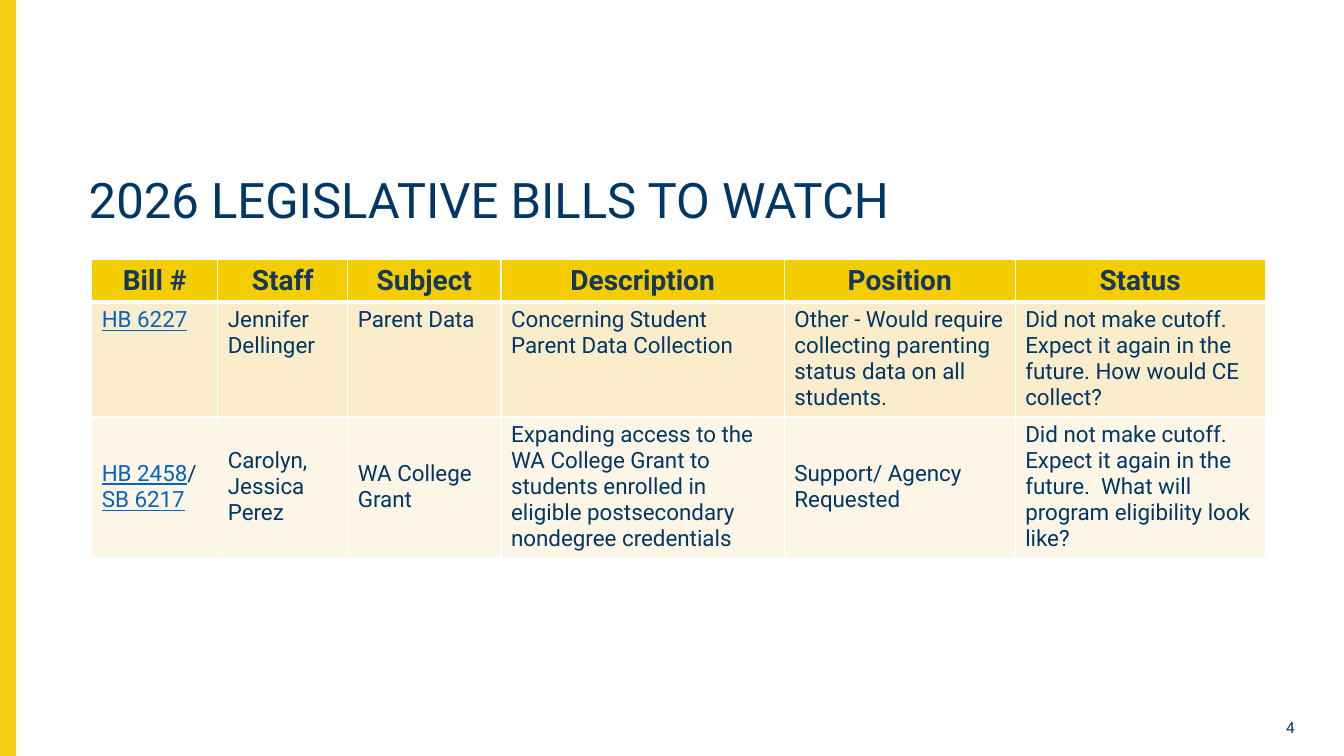
from typing import Any, NamedTuple

from lxml import etree
from pptx import Presentation
from pptx.dml.color import RGBColor
from pptx.enum.shapes import MSO_SHAPE
from pptx.enum.text import MSO_ANCHOR, MSO_AUTO_SIZE, PP_ALIGN
from pptx.oxml.ns import qn
from pptx.util import Inches, Pt

RECTANGLE = MSO_SHAPE.RECTANGLE
TOP, MIDDLE = MSO_ANCHOR.TOP, MSO_ANCHOR.MIDDLE
LEFT, CENTER, RIGHT = PP_ALIGN.LEFT, PP_ALIGN.CENTER, PP_ALIGN.RIGHT
NO_AUTOFIT = MSO_AUTO_SIZE.NONE

COLORS = {
    "bar": "F4CE12",
    "navy": "003764",
    "heading": "15385C",
    "link": "0563C1",
    "header_fill": "F4CD00",
    "parent_data_fill": "FBEDCC",
    "grant_fill": "FDF6E7",
    "border": "FFFFFF",
}
FORMATS = {
    "title": {"size": Pt(35), "bold": False},
    "heading": {"size": Pt(20), "bold": True},
    "body": {"size": Pt(16), "bold": False},
    "link": {"size": Pt(16), "bold": False, "underline": True},
    "page": {"size": Pt(11), "bold": False},
}


class Span(NamedTuple):
    text: str
    style: str = "body"
    color: str = "navy"


class BillRow(NamedTuple):
    cells: list[list[Span]]
    height: float
    fill: str
    anchor: Any = MIDDLE
    align: Any = LEFT
    top_border: float = 1
    bottom_border: float = 1


def body(*texts: str) -> list[list[Span]]:
    return [[Span(text)] for text in texts]


def link(text: str) -> Span:
    return Span(text, "link", "link")


HEADINGS = ["Bill #", "Staff", "Subject", "Description", "Position", "Status"]
COLUMN_WIDTHS = [1.25, 1.29, 1.52, 2.81, 2.29, 2.48]
BILL_ROWS = [
    BillRow(
        [[Span(heading, "heading", "heading")] for heading in HEADINGS],
        0.42, "header_fill", align=CENTER, bottom_border=3,
    ),
    BillRow(
        [[link("HB 6227")]] + body(
            "Jennifer Dellinger",
            "Parent Data",
            "Concerning Student Parent Data Collection",
            "Other - Would require collecting parenting status data on all students.",
            "Did not make cutoff. Expect it again in the future. How would CE collect?",
        ),
        1.14, "parent_data_fill", anchor=TOP, top_border=3,
    ),
    BillRow(
        [[link("HB 2458"), Span("/ "), link("SB 6217")]] + body(
            "Carolyn, Jessica Perez",
            "WA College Grant",
            "Expanding access to the WA College Grant to students enrolled in "
            "eligible postsecondary nondegree credentials",
            "Support/ Agency Requested",
            "Did not make cutoff. Expect it again in the future.  "
            "What will program eligibility look like?",
        ),
        1.39, "grant_fill",
    ),
]


def paint(fill: Any, color: str) -> None:
    fill.solid()
    fill.fore_color.rgb = RGBColor.from_string(COLORS[color])


def write(paragraph: Any, spans: list[Span], align: Any) -> None:
    paragraph.alignment = align
    for span in spans:
        run = paragraph.add_run()
        run.text = span.text
        run.font.name = "Roboto"
        run.font.color.rgb = RGBColor.from_string(COLORS[span.color])
        for attribute, value in FORMATS[span.style].items():
            setattr(run.font, attribute, value)


def add_borders(cell: Any, top: float, bottom: float) -> None:
    properties = cell._tc.get_or_add_tcPr()
    for side, width in {"lnL": 1, "lnR": 1, "lnT": top, "lnB": bottom}.items():
        border = etree.SubElement(properties, qn(f"a:{side}"), w=str(Pt(width)))
        fill = etree.SubElement(border, qn("a:solidFill"))
        etree.SubElement(fill, qn("a:srgbClr"), val=COLORS["border"])


def add_bar(slide: Any) -> None:
    bar = slide.shapes.add_shape(RECTANGLE, 0, 0, Inches(0.15), Inches(7.5))
    bar.shadow.inherit = False
    paint(bar.fill, "bar")
    paint(bar.line.fill, "bar")
    bar.line.width = Pt(1)


def add_title(slide: Any) -> None:
    title = slide.shapes.title
    placement = {"left": 0.78, "top": 1.7, "width": 12.16, "height": 0.87}
    for attribute, value in placement.items():
        setattr(title, attribute, Inches(value))
    frame = title.text_frame
    frame_format = {"auto_size": NO_AUTOFIT, "word_wrap": True, "vertical_anchor": TOP}
    for attribute, value in frame_format.items():
        setattr(frame, attribute, value)
    heading = frame.paragraphs[0]
    heading.line_spacing = 0.9
    write(heading, [Span("2026 LEGISLATIVE BILLS TO WATCH", "title")], LEFT)


def add_bills(slide: Any) -> None:
    bills = slide.shapes.add_table(
        len(BILL_ROWS), len(HEADINGS), Inches(0.91), Inches(2.57),
        Inches(sum(COLUMN_WIDTHS)), Inches(sum(row.height for row in BILL_ROWS)),
    ).table
    bills.first_row = bills.horz_banding = False
    for column, width in zip(bills.columns, COLUMN_WIDTHS):
        column.width = Inches(width)
    for table_row, bill in zip(bills.rows, BILL_ROWS):
        table_row.height = Inches(bill.height)
        for cell, spans in zip(table_row.cells, bill.cells):
            add_borders(cell, bill.top_border, bill.bottom_border)
            paint(cell.fill, bill.fill)
            cell.vertical_anchor = bill.anchor
            write(cell.text_frame.paragraphs[0], spans, bill.align)


def add_page_number(slide: Any) -> None:
    page_number = slide.shapes.add_textbox(
        Inches(12.26), Inches(7.09), Inches(0.68), Inches(0.26)
    )
    frame = page_number.text_frame
    frame.word_wrap = True
    frame.vertical_anchor = MIDDLE
    write(frame.paragraphs[0], [Span("4", "page")], RIGHT)


def main() -> None:
    presentation = Presentation()
    presentation.slide_width = Inches(13.33)
    presentation.slide_height = Inches(7.5)
    slide = presentation.slides.add_slide(presentation.slide_layouts[5])
    add_bar(slide)
    add_title(slide)
    add_bills(slide)
    add_page_number(slide)
    presentation.save("out.pptx")


if __name__ == "__main__":
    main()
